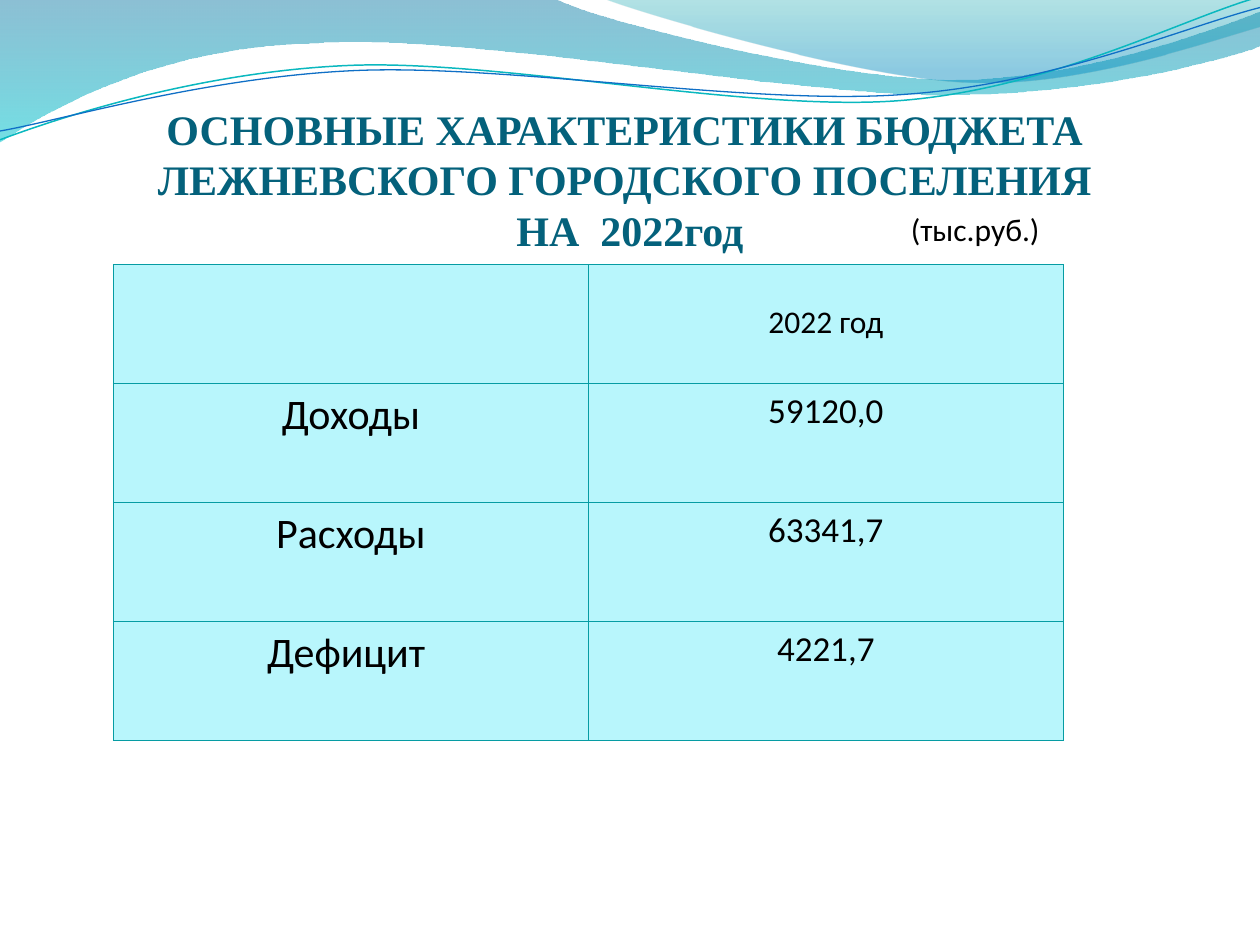
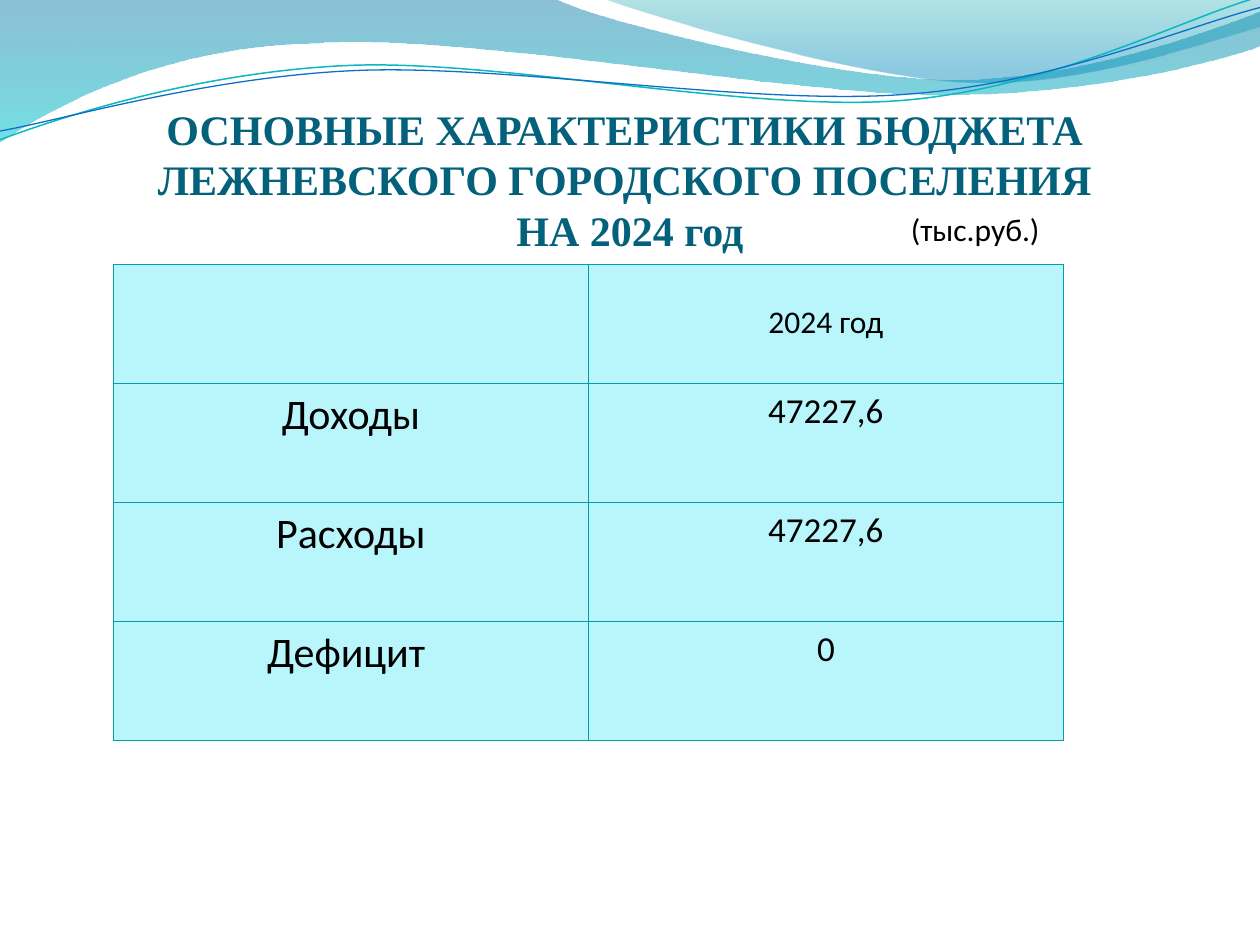
from lxml.etree import SubElement
from pptx import Presentation
from pptx.dml.color import RGBColor
from pptx.enum.text import MSO_ANCHOR as Anchor, MSO_AUTO_SIZE as Fit, PP_ALIGN as Align
from pptx.oxml.ns import qn
from pptx.util import Inches, Pt

INK, TITLE = "000000", "04617B"
CELL, EDGE = "B8F6FC", "069CA3"
UNIT = "(тыс.руб.)"
LABELS = ["Доходы", "Расходы", "Дефицит "]
BUDGETS = [
    ("НА  2022год", "2022 год", ["59120,0", "63341,7", "4221,7"]),
    ("НА 2024 год", "2024 год", ["47227,6", "47227,6", "0"]),
]

BAND = [
    [(0, 0)],
    [(4.4, -0.01)],
    [(4.76, 0.17), (6.64, 0.63), (7.58, 0.63)],
    [(8.53, 0.63), (9.58, 0.26), (10, 0.09)],
    [(10.01, 0.36)],
    [(9.83, 0.44), (8.7, 0.76), (7.46, 0.75)],
    [(6.22, 0.75), (3.82, 0.28), (2.57, 0.34)],
    [(1.29, 0.36), (0.46, 0.83), (-0.01, 1.13)],
    [(0, 0)],
]
CREST = [
    [(4.79, -0.01)],
    [(5.09, 0.11), (6.82, 0.62), (7.69, 0.65)],
    [(8.56, 0.69), (9.61, 0.32), (10, 0.21)],
    [(10, 0)],
    [(4.79, -0.01)],
]
TEAL = [
    [(0, 1.11)],
    [(0.48, 0.93), (1.58, 0.57), (2.77, 0.52)],
    [(3.95, 0.47), (5.93, 0.89), (7.13, 0.8)],
    [(8.33, 0.71), (9.38, 0.15), (9.98, -0.02)],
]
BLUE = [
    [(0, 1.04)],
    [(0.47, 0.96), (1.64, 0.61), (2.83, 0.56)],
    [(4.03, 0.51), (5.97, 0.84), (7.17, 0.75)],
    [(8.36, 0.67), (9.41, 0.21), (10, 0.06)],
]


def rgb(code):
    return RGBColor.from_string(code)


def bend(shape, steps):
    nodes = iter(list(shape.element.iter(qn("a:lnTo"))))
    for step in steps:
        knots = [next(nodes) for _ in step]
        if len(knots) == 3:
            curve = knots[0].makeelement(qn("a:cubicBezTo"))
            knots[0].addprevious(curve)
            for knot in knots:
                curve.append(knot[0])
                knot.getparent().remove(knot)


def add_path(slide, steps, close):
    start, *dots = [(Inches(x), Inches(y)) for step in steps for x, y in step]
    pen = slide.shapes.build_freeform(*start)
    pen.add_line_segments(dots, close=close)
    shape = pen.convert_to_shape()
    shape.shadow.inherit = False
    bend(shape, steps[1:])
    return shape


def add_wave(slide, steps, stops):
    shape = add_path(slide, steps, True)
    shape.line.fill.background()
    shape.fill.gradient()
    shape.fill.gradient_angle = 270
    for stop, (place, color, alpha) in zip(shape.fill.gradient_stops, stops):
        stop.position = place
        stop.color.rgb = rgb(color)
    for node, (place, color, alpha) in zip(shape.element.iter(qn("a:srgbClr")), stops):
        SubElement(node, qn("a:alpha"), val=str(alpha * 1000))
    return shape


def add_curve(slide, steps, color, width):
    shape = add_path(slide, steps, False)
    shape.fill.background()
    shape.line.color.rgb = rgb(color)
    shape.line.width = Pt(width)
    return shape


def share_waves(slide, layout):
    waves = [
        add_wave(slide, BAND, [(0, "0074A1", 45), (1, "00C6CF", 55)]),
        add_wave(slide, CREST, [(0, "00A1A9", 30), (0.8, "008BBF", 45)]),
        add_curve(slide, TEAL, "0AB8BF", 0.85),
        add_curve(slide, BLUE, "0F6FC6", 0.75),
    ]
    for i, wave in enumerate(waves):
        wave.element.nvSpPr.cNvPr.set("id", str(100 + i))
        layout.shapes.element.insert(2 + i, wave.element)


def style(par, size, color=INK, face="Calibri", bold=False, align=Align.CENTER):
    par.alignment = align
    font = par.font
    font.size, font.name, font.bold = Pt(size), face, bold
    font.color.rgb = rgb(color)


def set_title(slide, period):
    title = slide.shapes.title
    title.left, title.top = Inches(0.5), Inches(0.77)
    title.width, title.height = Inches(9), Inches(1.25)
    frame = title.text_frame
    frame.auto_size = Fit.NONE
    frame.vertical_anchor = Anchor.BOTTOM
    frame.margin_left = frame.margin_right = frame.margin_bottom = 0
    par = frame.paragraphs[0]
    par.text = ("ОСНОВНЫЕ ХАРАКТЕРИСТИКИ БЮДЖЕТА \v"
                "ЛЕЖНЕВСКОГО ГОРОДСКОГО ПОСЕЛЕНИЯ \v" + period)
    style(par, 24, TITLE, "Times New Roman", True)


def set_cell(cell, text, size):
    props = cell._tc.get_or_add_tcPr()
    for side in ("lnL", "lnR", "lnT", "lnB"):
        line = SubElement(props, qn("a:" + side), w=str(Pt(0.75)))
        fill = SubElement(line, qn("a:solidFill"))
        SubElement(fill, qn("a:srgbClr"), val=EDGE)
    cell.fill.solid()
    cell.fill.fore_color.rgb = rgb(CELL)
    par = cell.text_frame.paragraphs[0]
    par.text = text
    style(par, size)


def add_grid(slide, year, sums):
    rows = [("", year)] + list(zip(LABELS, sums))
    grid = slide.shapes.add_table(len(rows), 2, Inches(0.9), Inches(2.1),
                                  Inches(7.54), Inches(3.78)).table
    grid.first_row = grid.horz_banding = False
    for r, row in enumerate(rows):
        sizes = (24, 20) if r else (18, 18)
        for c, (text, size) in enumerate(zip(row, sizes)):
            set_cell(grid.cell(r, c), text, size)
    head = grid.cell(0, 1)
    head.vertical_anchor = Anchor.MIDDLE
    head.margin_bottom = Inches(0.08)


def add_unit(slide):
    box = slide.shapes.add_textbox(Inches(7.13), Inches(1.62), Inches(1.81), Inches(0.4))
    frame = box.text_frame
    frame.word_wrap = True
    frame.auto_size = Fit.SHAPE_TO_FIT_TEXT
    par = frame.paragraphs[0]
    par.text = UNIT
    style(par, 18, align=Align.LEFT)


def main():
    deck = Presentation()
    deck.slide_width, deck.slide_height = Inches(10), Inches(7.5)
    layout = deck.slide_layouts[5]
    for period, year, sums in BUDGETS:
        slide = deck.slides.add_slide(layout)
        set_title(slide, period)
        add_grid(slide, year, sums)
        add_unit(slide)
    share_waves(slide, layout)
    deck.save("out.pptx")


if __name__ == "__main__":
    main()
